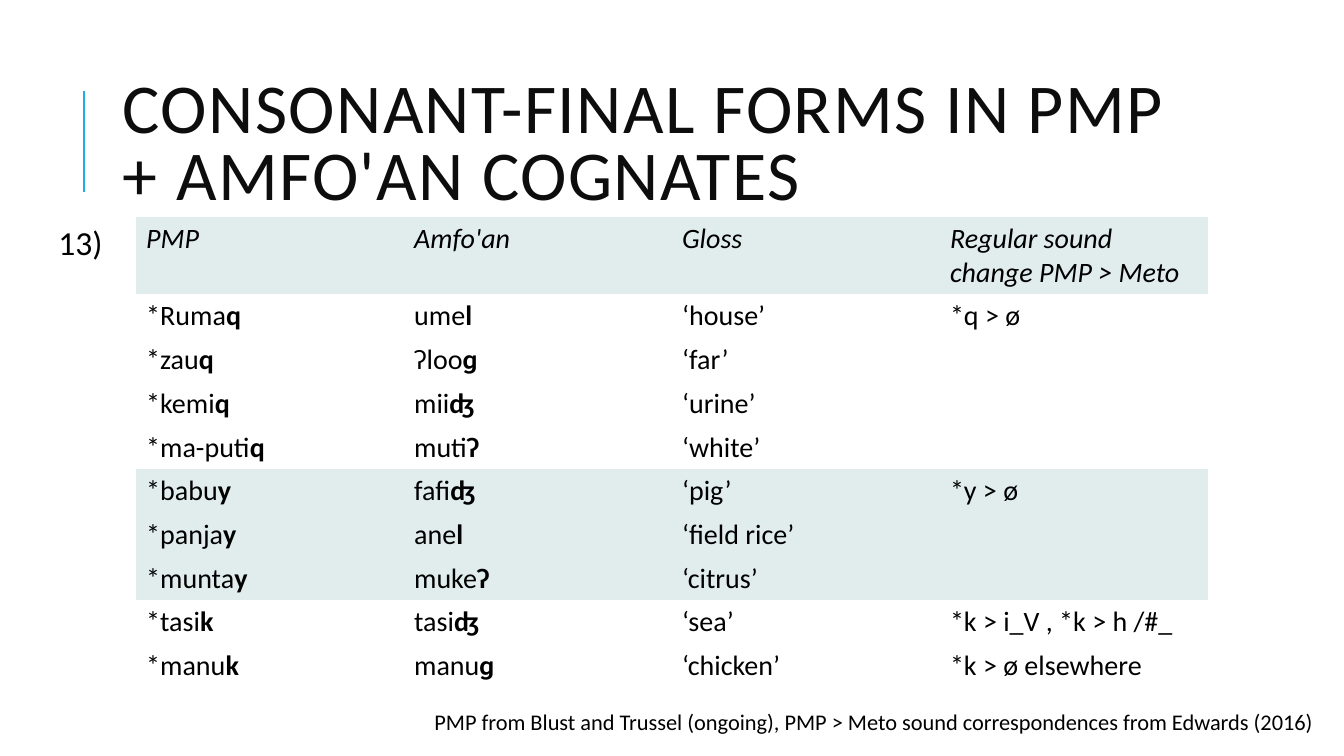
"""Build the slide on consonant-final PMP forms and their Amfo'an cognates."""
from dataclasses import dataclass

from lxml import etree
from pptx import Presentation
from pptx.dml.color import RGBColor
from pptx.enum.shapes import MSO_CONNECTOR
from pptx.enum.text import MSO_ANCHOR
from pptx.oxml.ns import qn
from pptx.util import Pt

STRAIGHT = MSO_CONNECTOR.STRAIGHT
TOP, MIDDLE = MSO_ANCHOR.TOP, MSO_ANCHOR.MIDDLE
EMU_PER_PX = 9144
PLAIN_TABLE = "{2D5ABB26-0587-4C30-8999-92F81FD0307C}"

HEADINGS = ("PMP", "Amfo'an", "Gloss", "Regular sound change PMP > Meto")
COGNATE_GROUPS = (
    (
        ("*Ruma|q", "ume|l", "‘house’", "*q > ø"),
        ("*zau|q", "ʔloo|ɡ", "‘far’", ""),
        ("*kemi|q", "mii|ʤ", "‘urine’", ""),
        ("*ma-puti|q", "muti|ʔ", "‘white’", ""),
    ),
    (
        ("*babu|y", "fafi|ʤ", "‘pig’", "*y > ø"),
        ("*panja|y", "ane|l", "‘field rice’", ""),
        ("*munta|y", "muke|ʔ", "‘citrus’", ""),
    ),
    (
        ("*tasi|k", "tasi|ʤ", "‘sea’", "*k > i_V , *k > h /#_"),
        ("*manu|k", "manu|ɡ", "‘chicken’", "*k > ø elsewhere"),
    ),
)


@dataclass(frozen=True)
class Theme:
    """Hold the font, colours and type sizes of the slide."""
    font: str = "Calibri"
    ink: str = "000000"
    title_ink: str = "0D0D0D"
    accent: str = "1CADE4"
    band: str = "E0EDEC"
    paper: str = "FFFFFF"
    title_size: int = 50
    number_size: int = 24
    table_size: int = 20
    source_size: int = 16


def px(length):
    """Turn whole pixels into EMU."""
    return length * EMU_PER_PX


class SlideBuilder:
    """Draw styled elements on the current slide."""

    def __init__(self, slide, theme):
        self.slide = slide
        self.theme = theme

    def style(self, paragraph, size, color, italic=False):
        """Set the font of a whole paragraph."""
        font = paragraph.font
        font.name = self.theme.font
        font.size = Pt(size)
        font.italic = italic
        font.color.rgb = RGBColor.from_string(color)

    def text(self, box, words, size, color, anchor=TOP, wrap=True):
        """Add a one-paragraph text box and return its paragraph."""
        frame = self.slide.shapes.add_textbox(*map(px, box)).text_frame
        frame.word_wrap = wrap
        frame.vertical_anchor = anchor
        paragraph = frame.paragraphs[0]
        paragraph.add_run().text = words
        self.style(paragraph, size, color)
        return paragraph

    def title(self, box, words):
        """Add the letter-spaced title."""
        paragraph = self.text(box, words, self.theme.title_size,
                              self.theme.title_ink, MIDDLE)
        paragraph.line_spacing = 0.8
        paragraph.runs[0].font._element.set("spc", "100")

    def rule(self, start, end):
        """Add a straight accent line."""
        line = self.slide.shapes.add_connector(STRAIGHT, *map(px, start + end))
        line.line.color.rgb = RGBColor.from_string(self.theme.accent)
        line.line.width = Pt(1.5)
        etree.SubElement(line.element.spPr, qn("a:effectLst"))

    def cell(self, cell, words, fill, italic):
        """Fill a cell, with the letters after the bar in bold."""
        cell.fill.solid()
        cell.fill.fore_color.rgb = RGBColor.from_string(fill)
        paragraph = cell.text_frame.paragraphs[0]
        stem, _, final = words.partition("|")
        if stem:
            paragraph.add_run().text = stem
        if final:
            ending = paragraph.add_run()
            ending.text = final
            ending.font.bold = True
        self.style(paragraph, self.theme.table_size, self.theme.ink, italic)

    def table(self, box, headings, groups):
        """Add a table whose groups of rows alternate in colour."""
        band, paper = self.theme.band, self.theme.paper
        rows = [(headings, band, True)]
        for index, group in enumerate(groups):
            fill = band if index % 2 else paper
            rows += [(row, fill, False) for row in group]
        frame = self.slide.shapes.add_table(len(rows), len(headings), *map(px, box))
        frame.element.find(".//" + qn("a:tableStyleId")).text = PLAIN_TABLE
        table = frame.table
        table.first_row = table.horz_banding = False
        for r, (row, fill, italic) in enumerate(rows):
            for c, words in enumerate(row):
                self.cell(table.cell(r, c), words, fill, italic)


def main():
    """Compose and save the slide."""
    theme = Theme()
    deck = Presentation()
    deck.slide_width, deck.slide_height = px(1333), px(750)
    builder = SlideBuilder(deck.slides.add_slide(deck.slide_layouts[6]), theme)
    builder.rule((83, 190), (83, 90))
    builder.title((112, 64, 1063, 164),
                  "CONSONANT-FINAL FORMS IN PMP + AMFO'AN COGNATES")
    builder.table((135, 215, 1063, 410), HEADINGS, COGNATE_GROUPS)
    builder.text((421, 698, 912, 37),
                 "PMP from Blust and Trussel (ongoing), "
                 "PMP > Meto sound correspondences from Edwards (2016)",
                 theme.source_size, theme.ink)
    builder.text((48, 215, 64, 50), "13)", theme.number_size, theme.ink, wrap=False)
    deck.save("out.pptx")


if __name__ == "__main__":
    main()
